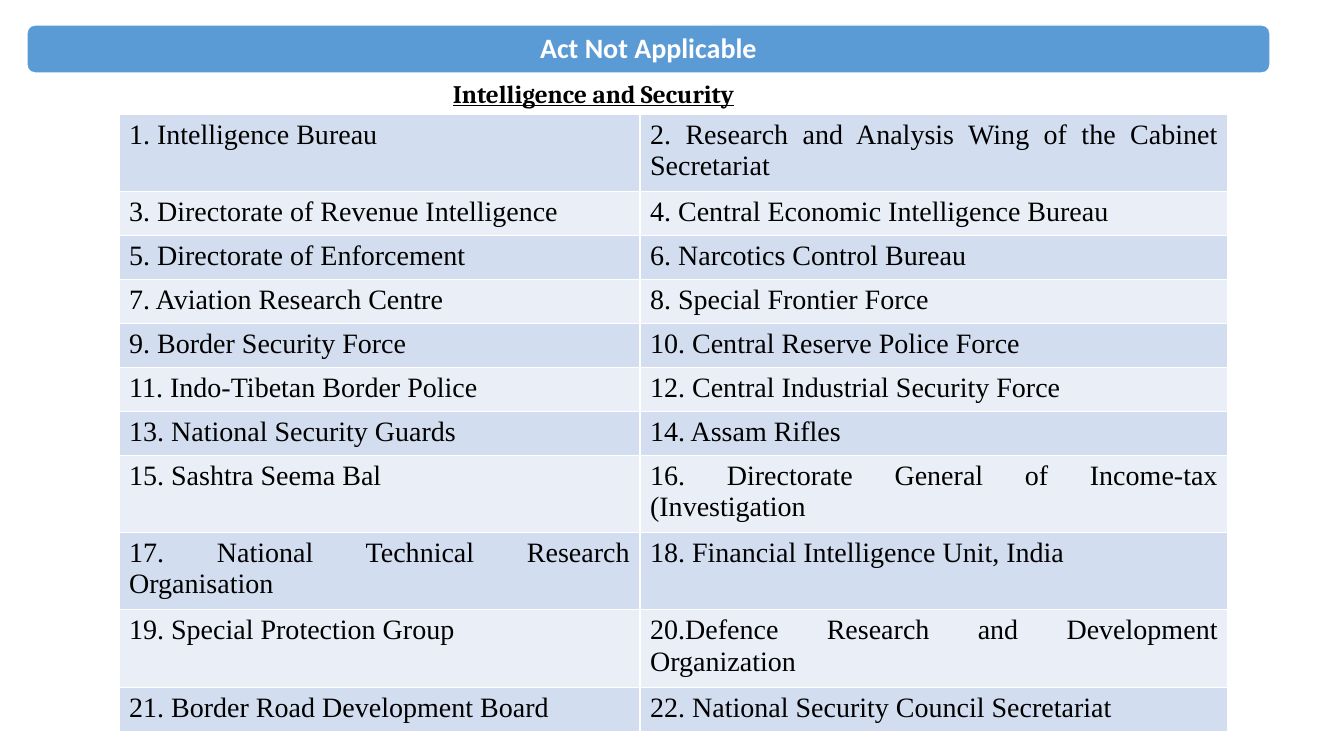
from lxml import etree
from pptx import Presentation, util as u
from pptx.dml.color import RGBColor
from pptx.enum import shapes, text
from pptx.oxml.ns import qn

PX = 914400 / 100.8
BLUE = RGBColor(0x5B, 0x9B, 0xD5)
DARK = RGBColor(0xD2, 0xDE, 0xEF)
PALE = RGBColor(0xEA, 0xEF, 0xF7)
WHITE = RGBColor(255, 255, 255)
BLACK = RGBColor(0, 0, 0)

COLS = (521, 588)
LOW, TALL = 44, 77
BODIES = [
    ("1. Intelligence Bureau", "2. Research and Analysis Wing of the Cabinet Secretariat", TALL),
    ("3. Directorate of Revenue Intelligence", "4. Central Economic Intelligence Bureau", LOW),
    ("5. Directorate of Enforcement", "6. Narcotics Control Bureau", LOW),
    ("7. Aviation Research Centre", "8. Special Frontier Force", LOW),
    ("9. Border Security Force", "10. Central Reserve Police Force", LOW),
    ("11. Indo-Tibetan Border Police", "12. Central Industrial Security Force", LOW),
    ("13. National Security Guards", "14. Assam Rifles", LOW),
    ("15. Sashtra Seema Bal", "16. Directorate General of Income-tax (Investigation", TALL),
    ("17. National Technical Research Organisation", "18. Financial Intelligence Unit, India", TALL),
    ("19. Special Protection Group", "20.Defence Research and Development Organization", TALL),
    ("21. Border Road Development Board", "22. National Security Council Secretariat", LOW),
]


def px(n):
    return u.Emu(round(n * PX))


def write(frame, words, font, size, color=BLACK, align=text.PP_ALIGN.LEFT,
          bold=False, line=False, lead=None):
    frame.word_wrap = True
    para = frame.paragraphs[0]
    para.alignment = align
    para.line_spacing = lead
    run = para.add_run()
    run.text = words
    face = run.font
    face.name, face.size, face.bold, face.underline = font, u.Pt(size), bold, line
    face.color.rgb = color


def banner(slide, words, x, y, w, h):
    bar = slide.shapes.add_shape(
        shapes.MSO_SHAPE.ROUNDED_RECTANGLE, px(x), px(y), px(w), px(h))
    bar.shadow.inherit = False
    bar.fill.solid()
    bar.fill.fore_color.rgb = BLUE
    bar.line.color.rgb = WHITE
    bar.line.width = u.Pt(1)
    bar.text_frame.vertical_anchor = text.MSO_ANCHOR.MIDDLE
    write(bar.text_frame, words, "Calibri", 20, WHITE,
          text.PP_ALIGN.CENTER, bold=True, lead=0.9)


def heading(slide, words, x, y, w, h):
    box = slide.shapes.add_textbox(px(x), px(y), px(w), px(h))
    write(box.text_frame, words, "Cambria", 18, bold=True, line=True)


def border(cell):
    """Draw a white 1 pt line on all four sides of a cell."""
    props = cell._tc.get_or_add_tcPr()
    for spot, side in enumerate(("lnL", "lnR", "lnT", "lnB")):
        edge = etree.Element(qn("a:" + side), w=str(u.Pt(1)))
        fill = etree.SubElement(edge, qn("a:solidFill"))
        etree.SubElement(fill, qn("a:srgbClr"), val=str(WHITE))
        props.insert(spot, edge)


def grid(slide, x, y):
    high = sum(body[-1] for body in BODIES)
    table = slide.shapes.add_table(
        len(BODIES), len(COLS), px(x), px(y), px(sum(COLS)), px(high)).table
    table.first_row = False
    for col, wide in zip(table.columns, COLS):
        col.width = px(wide)
    for i, (row, (*names, tall)) in enumerate(zip(table.rows, BODIES)):
        row.height = px(tall)
        for cell, name in zip(row.cells, names):
            cell.fill.solid()
            cell.fill.fore_color.rgb = PALE if i % 2 else DARK
            border(cell)
            write(cell.text_frame, name, "Times New Roman", 20,
                  align=text.PP_ALIGN.JUSTIFY)


def main():
    deck = Presentation()
    deck.slide_width, deck.slide_height = px(1344), px(756)
    slide = deck.slides.add_slide(deck.slide_layouts[6])
    banner(slide, "Act Not Applicable", 27, 25, 1243, 48)
    heading(slide, "Intelligence and Security", 443, 73, 443, 40)
    grid(slide, 119, 114)
    deck.save("out.pptx")


if __name__ == "__main__":
    main()
